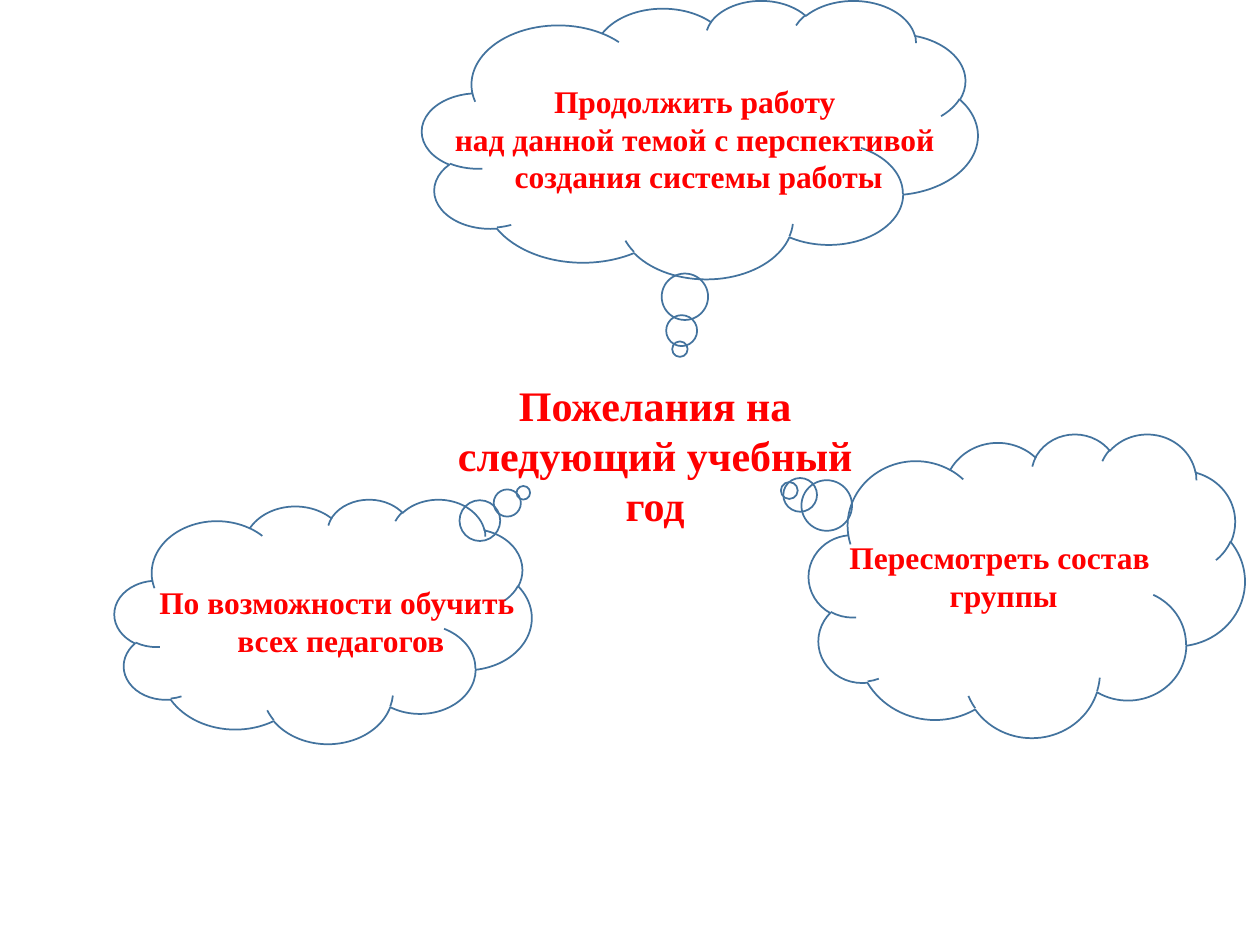
"""Build a slide with wishes for the next school year in thought clouds."""
from pptx import Presentation
from pptx.dml.color import RGBColor
from pptx.enum.shapes import MSO_SHAPE
from pptx.enum.text import MSO_AUTO_SIZE, PP_ALIGN
from pptx.util import Inches, Pt

RED = RGBColor(0xFF, 0x00, 0x00)
BLUE = RGBColor(0x43, 0x73, 0x9E)
CLOUD = MSO_SHAPE.CLOUD_CALLOUT
CENTER = PP_ALIGN.CENTER
GROW = MSO_AUTO_SIZE.SHAPE_TO_FIT_TEXT
FONT = "Times New Roman"


def add_text(slide, place, lines, size, wrap):
    box = slide.shapes.add_textbox(*[Inches(length) for length in place])
    frame = box.text_frame
    frame.word_wrap = wrap
    frame.auto_size = GROW
    frame.text = "\n".join(lines)
    for para in frame.paragraphs:
        para.alignment = CENTER
        for span in para.runs:
            span.font.name = FONT
            span.font.size = Pt(size)
            span.font.bold = True
            span.font.color.rgb = RED


deck = Presentation()
deck.slide_width = Inches(10)
deck.slide_height = Inches(7.5)
page = deck.slides.add_slide(deck.slide_layouts[6])

add_text(page, (3.35, 2.96, 3.7, 1.31), ["Пожелания на следующий учебный год"], 24, True)

clouds = [
    ((0.91, 3.96, 3.31, 1.94), (0.48, -0.525)),
    ((3.35, 0, 4.41, 2.21), (-0.036, 0.754)),
    ((6.42, 3.44, 3.46, 2.41), (-0.545, -0.312)),
]
for place, tail in clouds:
    cloud = page.shapes.add_shape(CLOUD, *[Inches(length) for length in place])
    cloud.adjustments[0], cloud.adjustments[1] = tail
    cloud.shadow.inherit = False
    cloud.fill.background()
    cloud.line.color.rgb = BLUE
    cloud.line.width = Pt(1)

wishes = [
    ((3.49, 0.6, 4.11, 1.01),
     ["Продолжить работу ", "над данной темой с перспективой ", "создания системы работы"]),
    ((6.63, 4.22, 2.67, 0.71), ["Пересмотреть состав ", "группы"]),
    ((1.15, 4.58, 3.11, 0.71), ["По возможности обучить ", "всех педагогов"]),
]
for place, lines in wishes:
    add_text(page, place, lines, 18, False)

deck.save("out.pptx")
